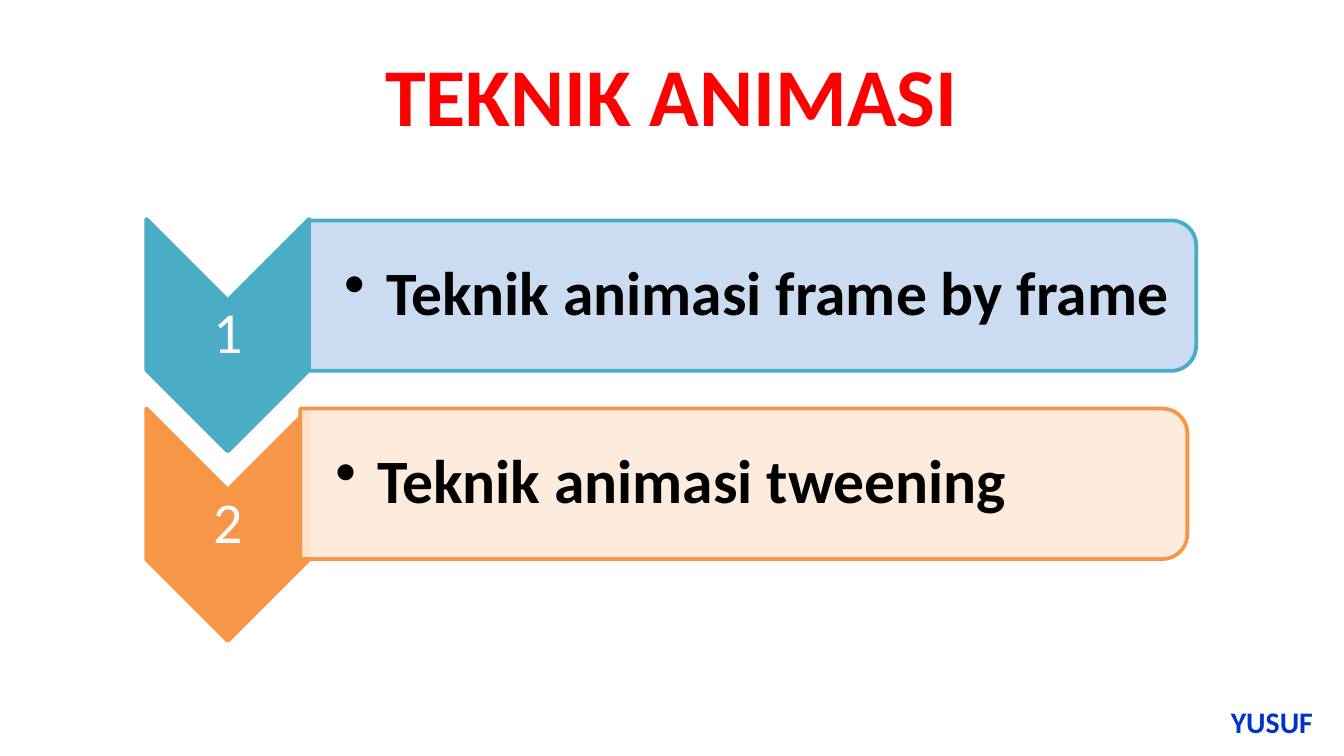
import pptx
import pptx.util
import pptx.dml.color
import pptx.enum.shapes
import pptx.enum.text
import pptx.oxml
import pptx.oxml.ns

Pt = pptx.util.Pt
Kind = pptx.enum.shapes.MSO_SHAPE
Align = pptx.enum.text.PP_ALIGN
Mid = pptx.enum.text.MSO_ANCHOR.MIDDLE

TITLE = "TEKNIK ANIMASI"
AUTHOR = "YUSUF"
STEPS = [
    ("1", "Teknik animasi frame by frame", "4BACC6", "C6D9F1", 165.6),
    ("2", "Teknik animasi tweening", "F79646", "FDEADA", 160.9),
]
HEAD = {"size": Pt(44), "bold": True, "name": "Calibri"}
SIGN = {"size": Pt(16), "bold": True, "name": "Calibri"}
NUM = {"size": Pt(31), "bold": False, "name": "Calibri"}
ITEM = {"size": Pt(33), "bold": True, "name": "Calibri"}
SLIM = {"margin_left": Pt(1.5), "margin_right": Pt(1.5),
        "margin_top": Pt(1.5), "margin_bottom": Pt(1.5)}
DEEP = {**SLIM, "margin_left": Pt(18.7)}

ARROW = (124.5, 87.2)
BAR = (80.6, 475.2)
MID_X = 122
ARROW_Y, ARROW_GAP = 179.6, 101.5
BAR_Y, BAR_GAP = 158.4, 100.8
INDENT = 22.5


def color(code):
    return pptx.dml.color.RGBColor.from_string(code)


def apply(target, values):
    for key, value in values.items():
        setattr(target, key, value)


def write(slide, box, text, font, code, frame=None, para=None, bullet=False):
    body = slide.shapes.add_textbox(*map(Pt, box)).text_frame
    apply(body, {"word_wrap": True, "vertical_anchor": Mid, **(frame or {})})
    line = body.paragraphs[0]
    line.text = text
    apply(line, para or {})
    if bullet:
        props = line._p.get_or_add_pPr()
        props.set("marL", str(Pt(INDENT)))
        props.set("indent", str(-Pt(INDENT)))
        mark = pptx.oxml.ns.qn("a:buChar")
        props.append(props.makeelement(mark, {"char": "•"}))
    run = line.runs[0].font
    apply(run, font)
    run.color.rgb = color(code)


def turned(slide, kind, size, x, y, fill, edge, alpha=None):
    wide, high = size
    shape = slide.shapes.add_shape(
        kind, Pt(x - wide / 2), Pt(y - high / 2), Pt(wide), Pt(high))
    shape.rotation = 90
    shape.shadow.inherit = False
    shape.fill.solid()
    shape.fill.fore_color.rgb = color(fill)
    shape.line.color.rgb = color(edge)
    shape.line.width = Pt(2)
    if alpha:
        tag = pptx.oxml.ns.qn("a:srgbClr")
        tint = next(shape._element.spPr.iter(tag))
        name = pptx.oxml.ns.qn("a:alpha")
        tint.append(tint.makeelement(name, {"val": str(alpha * 1000)}))


def main():
    deck = pptx.Presentation()
    deck.slide_width, deck.slide_height = Pt(720), Pt(405)
    slide = deck.slides.add_slide(deck.slide_layouts[6])
    center = {"alignment": Align.CENTER}
    tight = {"line_spacing": 0.9}

    write(slide, (652.3, 371.5, 61.9, 30.2), AUTHOR, SIGN, "0033CC")
    write(slide, (36, 16.6, 648, 67.7), TITLE, HEAD, "FF0000", para=center)

    for row, (num, text, edge, fill, left) in enumerate(STEPS):
        y = ARROW_Y + row * ARROW_GAP
        turned(slide, Kind.CHEVRON, ARROW, MID_X, y, edge, edge)
        write(slide, (MID_X - 43.6, y - 18.7, 87.2, 37.4), num, NUM, "FFFFFF",
              SLIM, {**center, **tight})
        y = BAR_Y + row * BAR_GAP
        turned(slide, Kind.ROUND_2_SAME_RECTANGLE, BAR, left + BAR[1] / 2, y,
               fill, edge, 90)
        write(slide, (left, y - 36.4, 471.6, 72.8), text, ITEM, "000000",
              DEEP, tight, True)

    deck.save("out.pptx")


if __name__ == "__main__":
    main()
